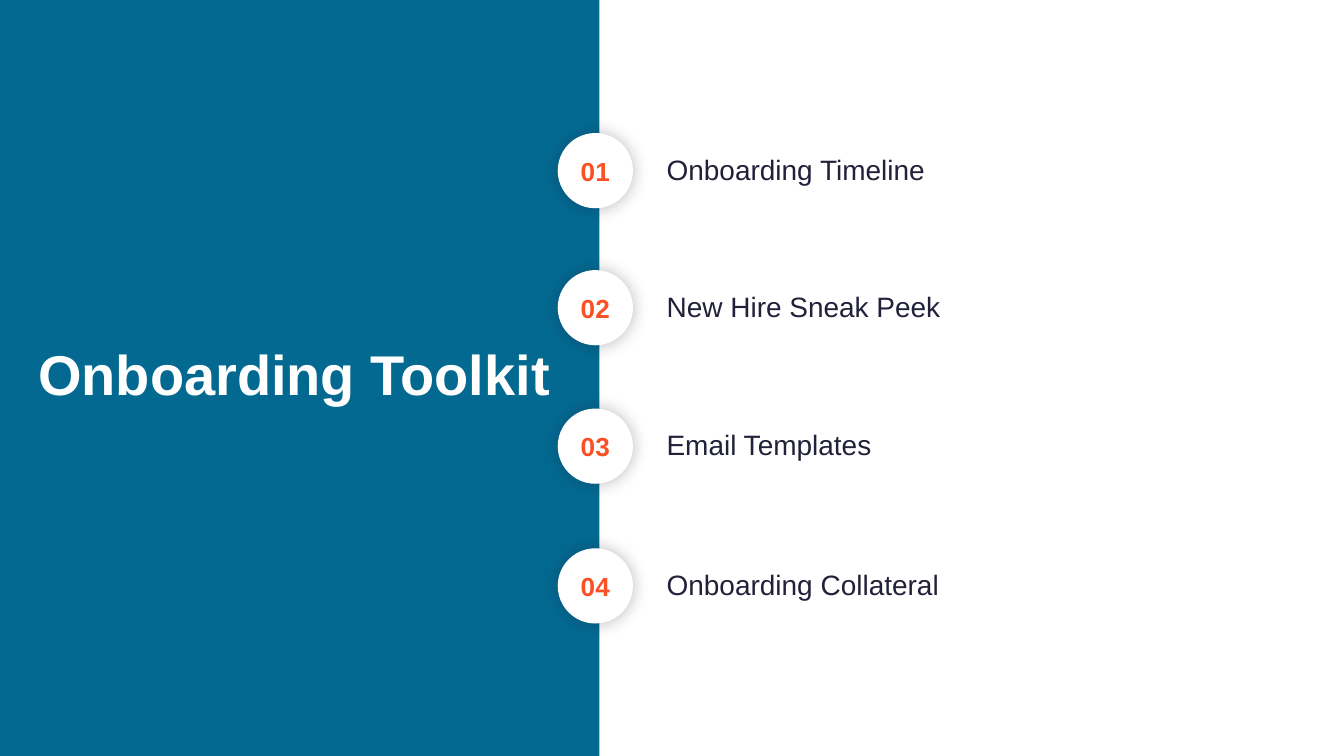
from dataclasses import dataclass

from lxml import etree
from pptx import Presentation
from pptx.dml import color
from pptx.enum import shapes, text
from pptx.oxml import ns
from pptx.util import Inches, Pt


@dataclass(frozen=True)
class Theme:
    font: str = "Arial"
    panel: str = "036991"
    white: str = "FFFFFF"
    ink: str = "21213A"
    accent: str = "FB5024"
    title_size: int = 30
    item_size: int = 15
    number_size: int = 14


THEME = Theme()
WIDTH = 10
HEIGHT = WIDTH * 9 / 16
CIRCLE = 0.56
ITEM_HEIGHT = 0.53
ITEMS = [
    (0.99, "Onboarding Timeline"),
    (2.01, "New Hire Sneak Peek"),
    (3.04, "Email Templates"),
    (4.08, "Onboarding Collateral"),
]


def rgb(value):
    return color.RGBColor.from_string(value)


def set_text(sp, content, size, ink, bold=False, align=text.PP_ALIGN.LEFT,
             line_spacing=None, space_before=0):
    tf = sp.text_frame
    tf.word_wrap = True
    tf.vertical_anchor = text.MSO_ANCHOR.MIDDLE
    tf.margin_left = tf.margin_right = Inches(0.07)
    tf.margin_top = tf.margin_bottom = Inches(0.04)
    p = tf.paragraphs[0]
    p.alignment = align
    p.line_spacing = line_spacing
    p.space_before = Pt(space_before)
    r = p.add_run()
    r.text = content
    r.font.name = THEME.font
    r.font.size = Pt(size)
    r.font.bold = bold
    r.font.color.rgb = rgb(ink)


def add_text(s, box, content, **fmt):
    sp = s.shapes.add_textbox(*map(Inches, box))
    set_text(sp, content, **fmt)


def add_filled(s, kind, box, fill):
    sp = s.shapes.add_shape(kind, *map(Inches, box))
    sp.fill.solid()
    sp.fill.fore_color.rgb = rgb(fill)
    sp.line.fill.background()
    sp.shadow.inherit = False
    return sp


def add_glow_shadow(sp, ink, blur, opacity):
    effects = sp.element.spPr.find(ns.qn("a:effectLst"))
    shadow = etree.SubElement(effects, ns.qn("a:outerShdw"), blurRad=str(Pt(blur)),
                              dist="0", dir="0", algn="ctr", rotWithShape="0")
    tint = etree.SubElement(shadow, ns.qn("a:srgbClr"), val=ink)
    etree.SubElement(tint, ns.qn("a:alpha"), val=str(opacity * 1000))


def add_agenda_item(s, number, top, label):
    label_top = top + (CIRCLE - ITEM_HEIGHT) / 2
    add_text(s, (4.89, label_top, 3.73, ITEM_HEIGHT), label, size=THEME.item_size,
             ink=THEME.ink, line_spacing=0.95, space_before=8)
    sp = add_filled(s, shapes.MSO_SHAPE.OVAL, (4.15, top, CIRCLE, CIRCLE), THEME.white)
    add_glow_shadow(sp, THEME.ink, blur=9, opacity=31)
    set_text(sp, f"{number:02}", size=THEME.number_size, ink=THEME.accent,
             bold=True, align=text.PP_ALIGN.CENTER)


def main():
    prs = Presentation()
    prs.slide_width = Inches(WIDTH)
    prs.slide_height = Inches(HEIGHT)
    s = prs.slides.add_slide(prs.slide_layouts[6])
    add_filled(s, shapes.MSO_SHAPE.RECTANGLE, (0, 0, 4.46, HEIGHT), THEME.panel)
    add_text(s, (0, 1.66, 4.38, 2.3), "Onboarding Toolkit", size=THEME.title_size,
             ink=THEME.white, bold=True, align=text.PP_ALIGN.CENTER, line_spacing=0.9)
    for number, (top, label) in enumerate(ITEMS, 1):
        add_agenda_item(s, number, top, label)
    prs.save("out.pptx")


main()
